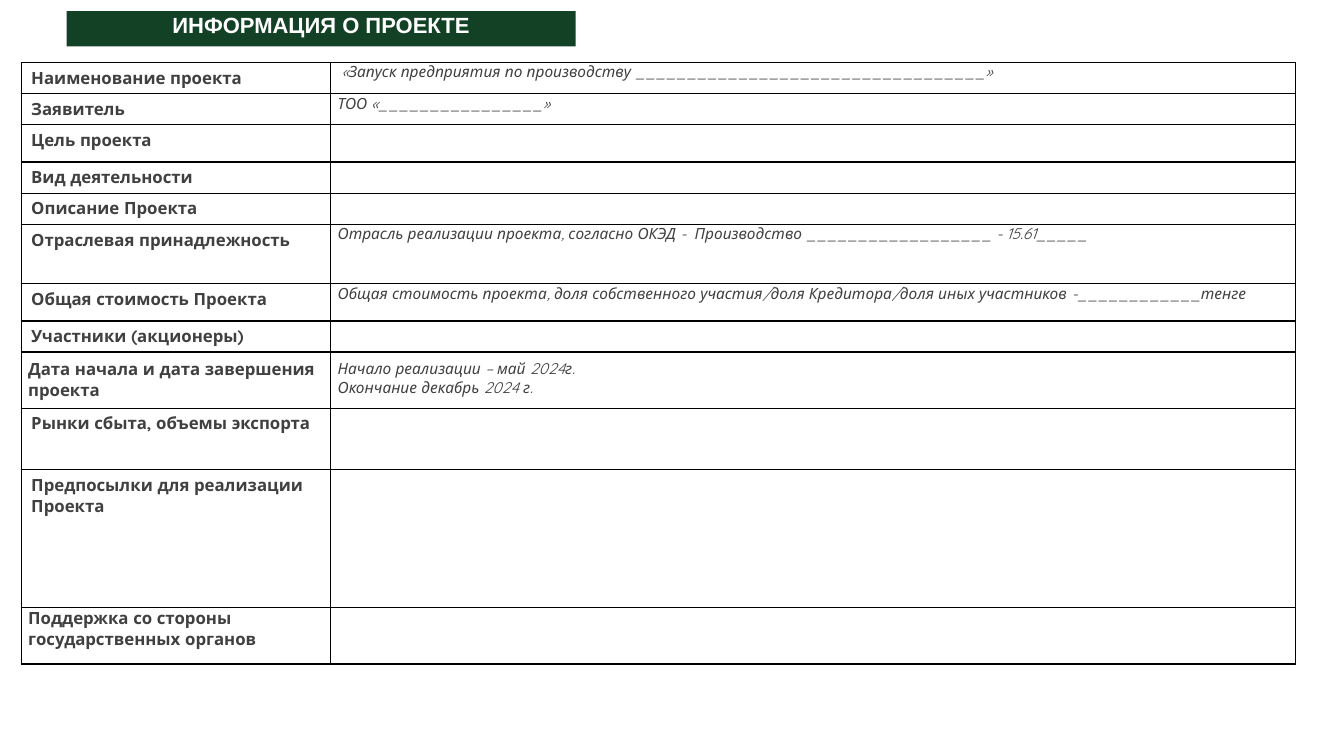
"""Build the project information slide: a title band above a two-column form."""
from dataclasses import dataclass

from lxml.etree import SubElement
from pptx import Presentation
from pptx.dml.color import RGBColor
from pptx.enum.text import MSO_ANCHOR, PP_ALIGN
from pptx.oxml.ns import qn
from pptx.slide import Slide
from pptx.table import _Cell
from pptx.util import Inches, Pt

GREEN = RGBColor(0x12, 0x41, 0x26)
WHITE = RGBColor(0xFF, 0xFF, 0xFF)
GRAY = RGBColor(0x40, 0x40, 0x40)
BLACK = RGBColor(0x00, 0x00, 0x00)

TITLE_FORMAT = {"name": "Arial", "size": Pt(15.7), "bold": True, "italic": False}
LABEL_FORMAT = {"name": "Quicksand", "size": Pt(12), "bold": True, "italic": False}
VALUE_FORMAT = {"name": "Quicksand", "size": Pt(11), "bold": False, "italic": True}

WIDE_INSETS = (0.1, 0.05)
FLAT_INSETS = (0.07, 0)
EVEN_INSETS = (0.07, 0.07)


@dataclass
class FormRow:
    """One line of the form; insets are horizontal and vertical inches."""

    height: float
    label: str
    value: str = ""
    label_insets: tuple[float, float] = WIDE_INSETS
    value_insets: tuple[float, float] = FLAT_INSETS


FORM_ROWS = [
    FormRow(0.3, "Наименование проекта",
            " «Запуск предприятия по производству __________________________________»"),
    FormRow(0.3, "Заявитель", "ТОО «________________»"),
    FormRow(0.37, "Цель проекта"),
    FormRow(0.3, "Вид деятельности"),
    FormRow(0.3, "Описание Проекта"),
    FormRow(0.59, "Отраслевая принадлежность",
            "Отрасль реализации проекта, согласно ОКЭД -  Производство "
            "__________________ - 15.61_____"),
    FormRow(0.37, "Общая стоимость Проекта",
            "Общая стоимость проекта, доля собственного участия/доля Кредитора/"
            "доля иных участников -____________тенге"),
    FormRow(0.3, "Участники (акционеры)"),
    FormRow(0.54, "Дата начала и дата завершения проекта",
            "Начало реализации – май 2024г.\nОкончание декабрь 2024 г.",
            EVEN_INSETS, EVEN_INSETS),
    FormRow(0.61, "Рынки сбыта, объемы экспорта"),
    FormRow(1.37, "Предпосылки для реализации Проекта"),
    FormRow(0.56, "Поддержка со стороны государственных органов",
            label_insets=FLAT_INSETS),
]


def format_font(font, values: dict, color: RGBColor) -> None:
    """Apply the format values and colour to a font."""
    for name, value in values.items():
        setattr(font, name, value)
    font.color.rgb = color


def add_borders(cell: _Cell) -> None:
    """Draw a thin black line on every side of a cell."""
    properties = cell._tc.get_or_add_tcPr()
    for position, side in enumerate(("lnL", "lnR", "lnT", "lnB")):
        line = SubElement(properties, qn(f"a:{side}"), w=str(Pt(1)))
        fill = SubElement(line, qn("a:solidFill"))
        SubElement(fill, qn("a:srgbClr"), val=str(BLACK))
        properties.insert(position, line)


def fill_cell(cell: _Cell, text: str, insets: tuple[float, float], values: dict) -> None:
    """Write and format one cell of the form."""
    across, down = (Inches(inset) for inset in insets)
    cell.margin_left = cell.margin_right = across
    cell.margin_top = cell.margin_bottom = down
    cell.vertical_anchor = MSO_ANCHOR.TOP
    cell.fill.solid()
    cell.fill.fore_color.rgb = WHITE
    add_borders(cell)
    cell.text = text
    for para in cell.text_frame.paragraphs:
        for span in para.runs:
            format_font(span.font, values, GRAY)
        if not para.runs:
            SubElement(para._p, qn("a:endParaRPr"), sz=str(int(values["size"].pt * 100)))


def add_form(page: Slide) -> None:
    """Place the table with all form rows."""
    height = sum(row.height for row in FORM_ROWS)
    table = page.shapes.add_table(len(FORM_ROWS), 2, Inches(0.21), Inches(0.62),
                                  Inches(12.64), Inches(height)).table
    table.first_row = table.horz_banding = False
    for column, width in zip(table.columns, (3.07, 9.57)):
        column.width = Inches(width)
    for index, row in enumerate(FORM_ROWS):
        table.rows[index].height = Inches(row.height)
        fill_cell(table.cell(index, 0), row.label, row.label_insets, LABEL_FORMAT)
        fill_cell(table.cell(index, 1), row.value, row.value_insets, VALUE_FORMAT)


def format_title(page: Slide) -> None:
    """Turn the title placeholder into the green band."""
    title = page.shapes.title
    title.left, title.top = Inches(0.66), Inches(0.11)
    title.width, title.height = Inches(5.05), Inches(0.35)
    title.fill.solid()
    title.fill.fore_color.rgb = GREEN
    frame = title.text_frame
    frame.text = "ИНФОРМАЦИЯ О ПРОЕКТЕ"
    frame.word_wrap = True
    frame.vertical_anchor = MSO_ANCHOR.TOP
    for side in ("left", "right", "top", "bottom"):
        setattr(frame, f"margin_{side}", 0)
    para = frame.paragraphs[0]
    para.alignment = PP_ALIGN.CENTER
    para.space_before = Pt(0)
    format_font(para.runs[0].font, TITLE_FORMAT, WHITE)


def main() -> None:
    """Create the deck and save it."""
    deck = Presentation()
    deck.slide_width, deck.slide_height = Inches(13.33), Inches(7.5)
    page = deck.slides.add_slide(deck.slide_layouts[5])
    format_title(page)
    add_form(page)
    deck.save("out.pptx")


if __name__ == "__main__":
    main()
